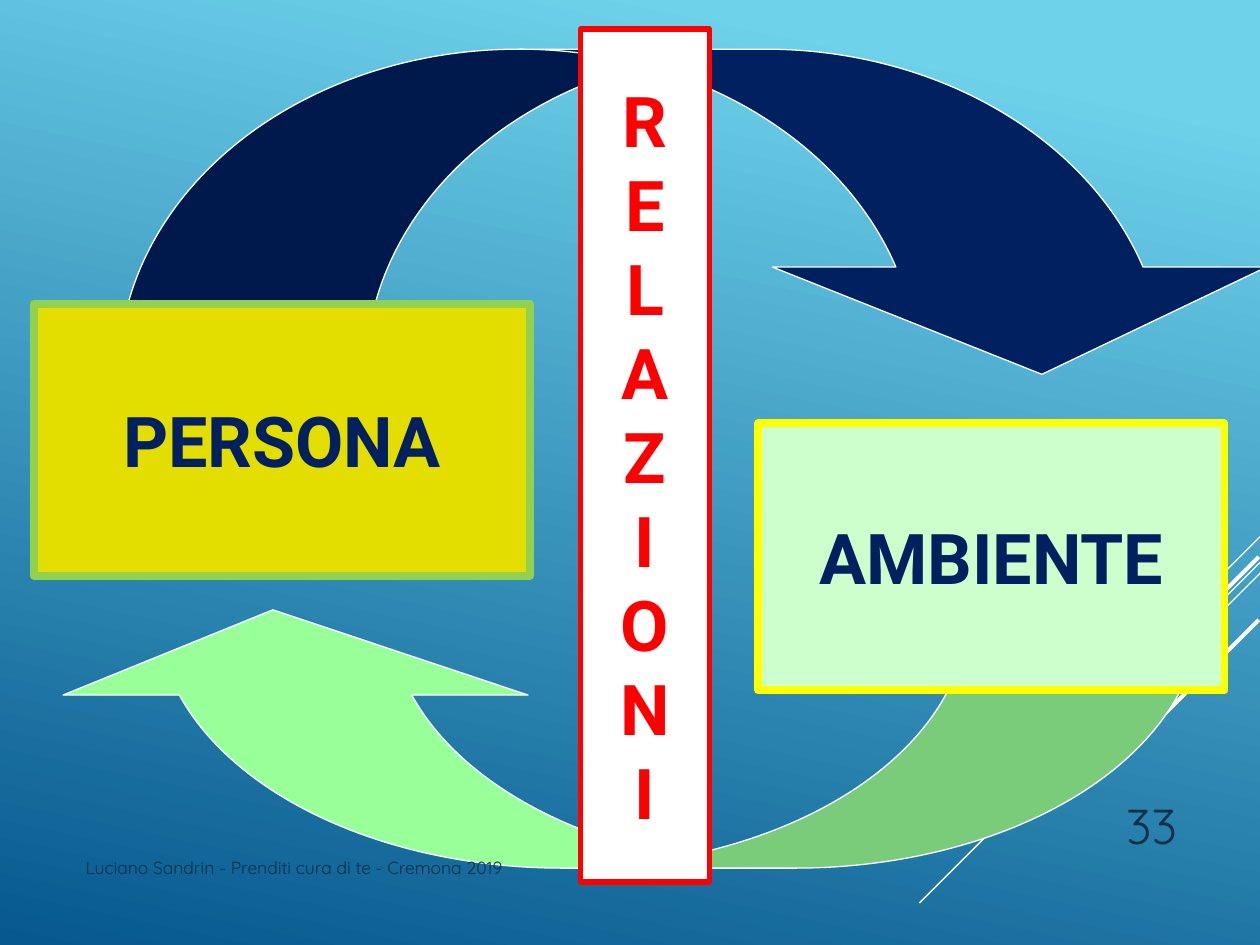
from lxml.etree import SubElement
from pptx import Presentation
from pptx.dml.color import RGBColor
from pptx.enum.shapes import MSO_CONNECTOR, MSO_SHAPE
from pptx.enum.text import MSO_ANCHOR, PP_ALIGN
from pptx.oxml.ns import qn
from pptx.util import Pt

BACKGROUND = [(0.1, "6ED2EB"), (1, "06588E")]
DIAGONALS = [
    (720, 306.7, 59.8, 0.75),
    (720, 321.4, 194.6, 0.75),
    (720, 327.6, 123.8, 0.75),
    (719.3, 318.2, 113, 2.25),
    (719.3, 354.2, 82, 2.25),
]
ARROWS = [
    (MSO_SHAPE.CURVED_LEFT_ARROW, (280.8, 90.7, 147.6, 663.1), 90, (0.9, 1.8, 0.33), "99FF99"),
    (MSO_SHAPE.CURVED_DOWN_ARROW, (67.7, 28.1, 668.9, 185.8), 0, (0.76, 1.52, 0.33), "002060"),
]
BOXES = [
    (["AMBIENTE"], (433.4, 241.9, 266.4, 152.6), "CCFFCC", "FFFF00", 4.5, "002060"),
    (["PERSONA"], (19.4, 173.5, 283.7, 155.5), "E3DE00", "92D050", 4.5, "002060"),
    (list("RELAZIONI"), (331.9, 16.6, 73.4, 487.4), "FFFFFF", "FF0000", 3, "FF0000"),
]
LABELS = [
    ("33", (612, 439.2, 67.7, 52.6), 28, PP_ALIGN.RIGHT, MSO_ANCHOR.BOTTOM),
    ("Luciano Sandrin - Prenditi cura di te - Cremona 2019",
     (41.8, 486, 457.9, 28.8), 10, PP_ALIGN.LEFT, MSO_ANCHOR.TOP),
]


def rgb(color):
    return RGBColor.from_string(color)


def points(values):
    return [Pt(v) for v in values]


def set_line(sp, color, width):
    sp.line.color.rgb = rgb(color)
    sp.line.width = Pt(width)


def add_shape(slide, kind, place, fill, line, width):
    sp = slide.shapes.add_shape(kind, *points(place))
    sp.shadow.inherit = False
    sp.fill.solid()
    sp.fill.fore_color.rgb = rgb(fill)
    set_line(sp, line, width)
    return sp


def set_text(sp, lines, font, size, color, align, anchor, bold=False):
    tf = sp.text_frame
    tf.word_wrap = True
    tf.vertical_anchor = anchor
    tf.text = "\n".join(lines)
    for p in tf.paragraphs:
        p.alignment = align
        p.font.name = font
        p.font.size = Pt(size)
        p.font.bold = bold
        p.font.color.rgb = rgb(color)


def main():
    prs = Presentation()
    prs.slide_width, prs.slide_height = Pt(720), Pt(540)
    slide = prs.slides.add_slide(prs.slide_layouts[6])

    fill = slide.background.fill
    fill.gradient()
    fill.gradient_angle = 258
    for stop, (position, color) in zip(fill.gradient_stops, BACKGROUND):
        stop.position = position
        stop.color.rgb = rgb(color)

    for x, y, run, width in DIAGONALS:
        ends = points((x, y, x - run, y + run))
        line = slide.shapes.add_connector(MSO_CONNECTOR.STRAIGHT, *ends)
        set_line(line, "FFFFFF", width)
        SubElement(line._element.spPr, qn("a:effectLst"))

    for kind, place, rotation, adjustments, color in ARROWS:
        sp = add_shape(slide, kind, place, color, "FFFFFF", 0.75)
        sp.rotation = rotation
        for i, value in enumerate(adjustments):
            sp.adjustments[i] = value

    for lines, place, color, border, width, ink in BOXES:
        sp = add_shape(slide, MSO_SHAPE.RECTANGLE, place, color, border, width)
        set_text(sp, lines, "Roboto", 40, ink, PP_ALIGN.CENTER, MSO_ANCHOR.MIDDLE, True)
        for p in sp.text_frame.paragraphs:
            p.line_spacing = Pt(48)

    for text, place, size, align, anchor in LABELS:
        sp = slide.shapes.add_textbox(*points(place))
        set_text(sp, [text], "Quicksand", size, "0A304A", align, anchor)

    prs.save("out.pptx")


if __name__ == "__main__":
    main()
